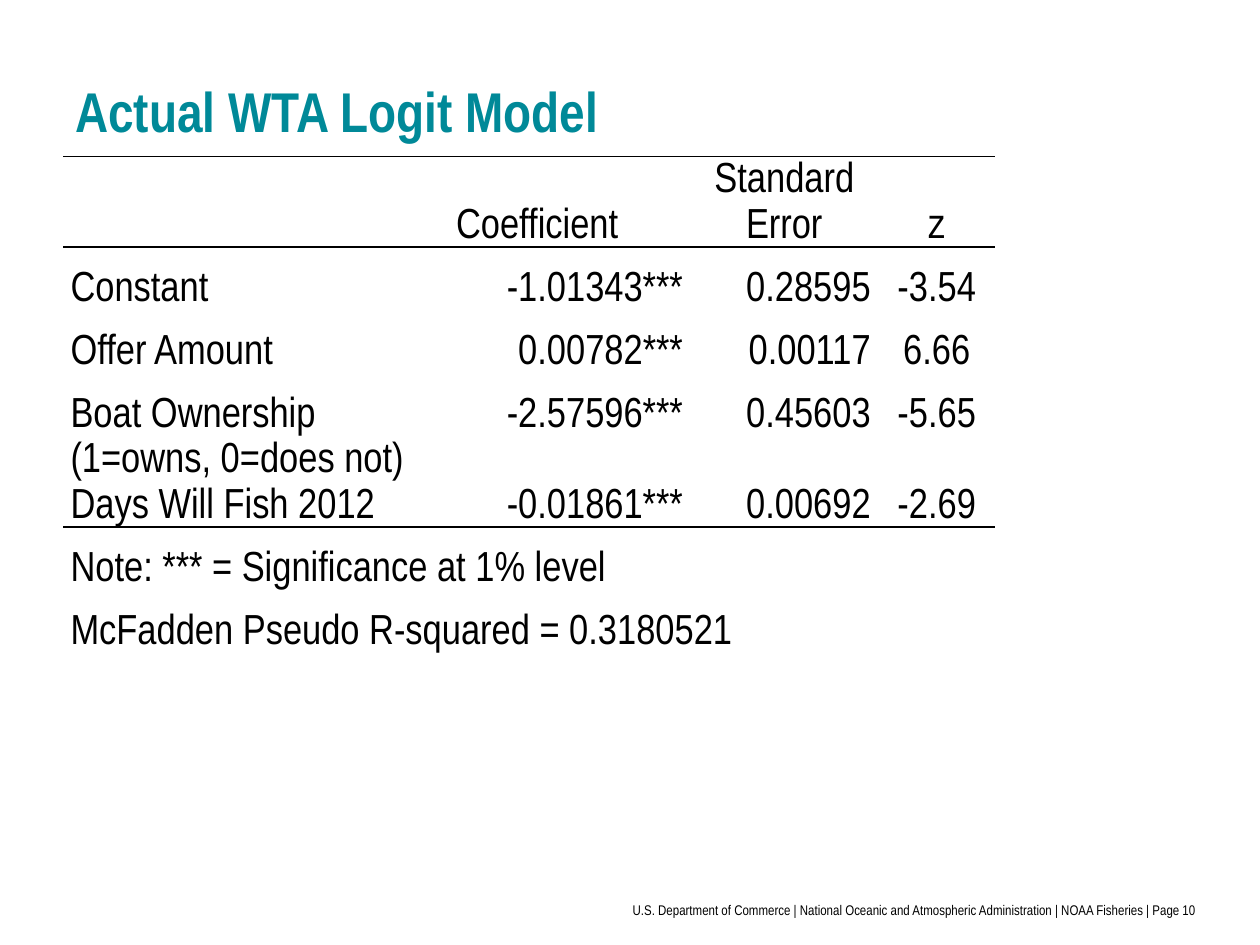
"""Build the logit model results slide."""
from typing import NamedTuple

from lxml.etree import SubElement
from pptx import Presentation
from pptx.dml.color import RGBColor
from pptx.enum.text import MSO_ANCHOR as Anchor, PP_ALIGN as Align
from pptx.oxml.ns import qn
from pptx.util import Inches, Pt

COLORS = {"title": "008998", "text": "000000"}
FONT = "Arial Narrow"
COL_WIDTHS = (3.06, 1.92, 1.49, 0.93)
RULES_ABOVE = {0, 1, 5}
HEADER_ALIGN = (Align.LEFT, Align.LEFT, Align.CENTER, Align.CENTER)
BODY_ALIGN = (Align.LEFT, Align.RIGHT, Align.RIGHT, Align.CENTER)


class Row(NamedTuple):
    cells: tuple[str, ...]
    align: tuple = BODY_ALIGN
    height: float = 0.5
    span: int = 1


class Label(NamedTuple):
    text: str
    box: tuple[float, float, float, float]
    margins: tuple[float, float]
    style: dict


ROWS = (
    Row(("", "Coefficient", "Standard Error", "z"), align=HEADER_ALIGN),
    Row(("Constant", "-1.01343***", "0.28595", "-3.54")),
    Row(("Offer Amount", "0.00782***", "0.00117", "6.66")),
    Row(("Boat Ownership", "-2.57596***", "0.45603", "-5.65")),
    Row(("(1=owns, 0=does not)\nDays Will Fish 2012", "-0.01861***", "0.00692", "-2.69"),
        height=0.59),
    Row(("Note: *** = Significance at 1% level", "", "", ""), span=3),
    Row(("McFadden Pseudo R-squared = 0.3180521", "", "", ""), span=3),
)
LABELS = (
    Label("Actual WTA Logit Model", (0.5, 0.5, 9, 0.74), (0.1, 0.05),
          {"size": 32, "color": "title", "bold": True}),
    Label("U.S. Department of Commerce | National Oceanic and Atmospheric "
          "Administration | NOAA Fisheries | Page 10",
          (2.5, 6.95, 7, 0.55), (0, 0.05), {"size": 8, "align": Align.RIGHT}),
)


def write(tf, text: str, *, size: float, color: str = "text", bold: bool = False,
          align=Align.LEFT, spacing: float = 1.0) -> None:
    """Fill a text frame with one formatted paragraph per line of text."""
    for i, line in enumerate(text.split("\n")):
        p = tf.add_paragraph() if i else tf.paragraphs[0]
        p.alignment, p.line_spacing = align, spacing
        r = p.add_run()
        r.text = line
        r.font.name, r.font.size, r.font.bold = FONT, Pt(size), bold
        r.font.color.rgb = RGBColor.from_string(COLORS[color])


def set_borders(cell, visible: set[str]) -> None:
    """Draw the named cell sides and hide the others."""
    tc_pr = cell._tc.get_or_add_tcPr()
    for side in "LRTB":
        ln = SubElement(tc_pr, qn(f"a:ln{side}"), w=str(Pt(1)))
        if side in visible:
            fill = SubElement(ln, qn("a:solidFill"))
            SubElement(fill, qn("a:srgbClr"), val=COLORS["text"])
        else:
            SubElement(ln, qn("a:noFill"))


def add_label(s, label: Label) -> None:
    """Add a vertically centred text box."""
    sp = s.shapes.add_textbox(*map(Inches, label.box))
    tf = sp.text_frame
    tf.word_wrap = True
    tf.vertical_anchor = Anchor.MIDDLE
    tf.margin_left = tf.margin_right = Inches(label.margins[0])
    tf.margin_top = tf.margin_bottom = Inches(label.margins[1])
    write(tf, label.text, **label.style)


def add_results(s) -> None:
    """Add the table of model estimates."""
    height = Inches(4.34)
    frame = s.shapes.add_table(len(ROWS), len(COL_WIDTHS), Inches(0.5), Inches(1.24),
                               Inches(sum(COL_WIDTHS)), height)
    table = frame.table
    table.first_row = table.horz_banding = False
    for col, width in zip(table.columns, COL_WIDTHS):
        col.width = Inches(width)
    for i, row in enumerate(ROWS):
        table.rows[i].height = Inches(row.height)
        visible = {side for side, edge in (("T", i), ("B", i + 1)) if edge in RULES_ABOVE}
        for j, text in enumerate(row.cells):
            cell = table.cell(i, j)
            set_borders(cell, visible)
            cell.fill.background()
            cell.vertical_anchor = Anchor.BOTTOM
            cell.margin_left = cell.margin_right = Inches(0.06)
            cell.margin_top = cell.margin_bottom = 0
            if text:
                write(cell.text_frame, text, size=24, align=row.align[j], spacing=1.15)
        if row.span > 1:
            table.cell(i, 0).merge(table.cell(i, row.span - 1))
    frame.height = height


def main() -> None:
    """Create and save the slide."""
    prs = Presentation()
    prs.slide_width, prs.slide_height = Inches(10), Inches(7.5)
    s = prs.slides.add_slide(prs.slide_layouts[6])
    add_results(s)
    for label in LABELS:
        add_label(s, label)
    prs.save("out.pptx")


if __name__ == "__main__":
    main()
